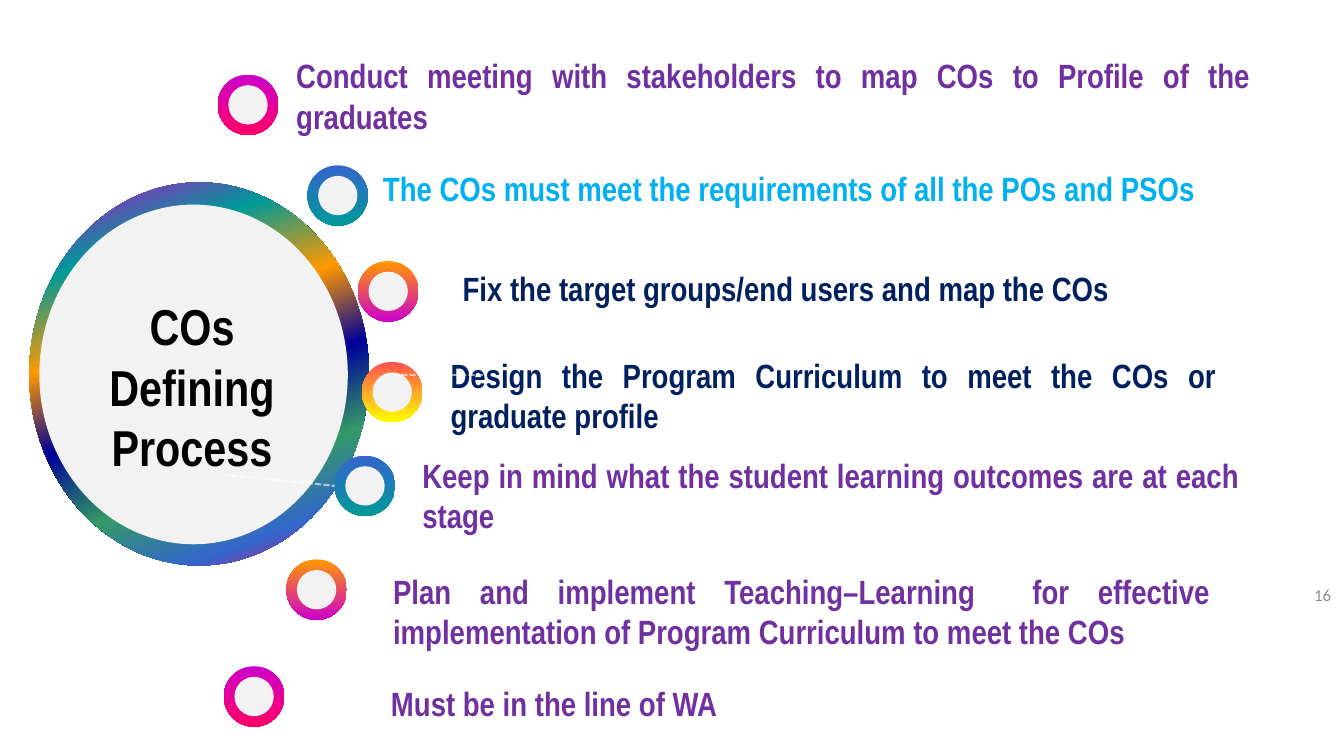
from lxml import etree
from pptx import Presentation
from pptx.dml.color import RGBColor
from pptx.enum.dml import MSO_LINE
from pptx.enum.shapes import MSO_CONNECTOR, MSO_SHAPE
from pptx.enum.text import MSO_ANCHOR, PP_ALIGN
from pptx.oxml.ns import qn
from pptx.util import Inches, Pt

OVAL = MSO_SHAPE.OVAL
LINE = MSO_CONNECTOR.STRAIGHT
DASH = MSO_LINE.SQUARE_DOT
TOP, MID = MSO_ANCHOR.TOP, MSO_ANCHOR.MIDDLE
LEFT, RIGHT = PP_ALIGN.LEFT, PP_ALIGN.RIGHT
CENTER, JUST = PP_ALIGN.CENTER, PP_ALIGN.JUSTIFY

# Content
PURPLE, SKY, NAVY, PALE = "7030A0", "00B0F0", "002060", "F2F2F2"
PINK = [(0, "CC00CC"), (100, "FF0066")]
TEAL = [(0, "3366CC"), (100, "009999")]
AMBER = [(0, "FF9900"), (100, "CC00CC")]
SUN = [(0, "FF5050"), (100, "FFFF00")]
RAINBOW = [(0, "CC00CC"), (20, "009999"), (38, "FF9900"), (55, "000099"),
           (72, "339966"), (87, "3366CC"), (100, "FF0066")]

# ring left and top, ring stops, text box, text colour, text
STEPS = [
    (2.16, 0.74, PINK, (2.84, 0.5, 9.66, 0.91), PURPLE,
     "Conduct meeting with stakeholders to map COs to Profile of the graduates"),
    (3.05, 1.64, TEAL, (3.7, 1.62, 8.71, 0.5), SKY,
     "The COs must meet the requirements of all the POs and PSOs"),
    (3.55, 2.59, AMBER, (4.49, 2.61, 7.53, 0.5), NAVY,
     "Fix the target groups/end users and map the COs"),
    (3.59, 3.59, SUN, (4.37, 3.47, 7.79, 0.91), NAVY,
     "Design the Program Curriculum to meet the COs or graduate profile"),
    (3.32, 4.52, TEAL, (4.09, 4.46, 8.3, 0.91), PURPLE,
     "Keep in mind what the student learning outcomes are at each stage"),
    (2.84, 5.55, AMBER, (3.8, 5.61, 8.3, 0.91), PURPLE,
     "Plan and implement Teaching–Learning  for effective "
     "implementation of Program Curriculum to meet the COs"),
    (2.22, 6.61, PINK, (3.78, 6.73, 4.17, 0.5), PURPLE,
     "Must be in the line of WA"),
]
LINKS = [(3.81, 3.72, 4.79, 3.72), (2.21, 4.71, 3.32, 4.82)]
RING, HOLE = 0.6, 0.39

deck = Presentation()
deck.slide_width, deck.slide_height = Inches(13.33), Inches(7.5)
slide = deck.slides.add_slide(deck.slide_layouts[6])


def color(code):
    return RGBColor.from_string(code)


def blend(shape, stops, angle):
    shape.fill.gradient()
    grad = shape.element.spPr.find(qn("a:gradFill"))
    items = grad.find(qn("a:gsLst"))
    for old in list(items):
        items.remove(old)
    for pos, code in stops:
        stop = etree.SubElement(items, qn("a:gs"), pos=str(pos * 1000))
        etree.SubElement(stop, qn("a:srgbClr"), val=code)
    lin = grad.find(qn("a:lin"))
    lin.set("ang", str(angle * 60000))
    lin.set("scaled", "0")


def oval(home, box, stops=None, angle=90):
    shape = home.add_shape(OVAL, *map(Inches, box))
    shape.shadow.inherit = False
    shape.line.fill.background()
    if stops:
        blend(shape, stops, angle)
    else:
        shape.fill.solid()
        shape.fill.fore_color.rgb = color(PALE)


def write(text, box, size=24, font="Arial Narrow", code="000000",
          bold=True, align=JUST, anchor=TOP):
    frame = slide.shapes.add_textbox(*map(Inches, box)).text_frame
    frame.word_wrap = True
    frame.vertical_anchor = anchor
    frame.text = text
    for para in frame.paragraphs:
        para.alignment = align
        face = para.runs[0].font
        face.size, face.name, face.bold = Pt(size), font, bold
        face.color.rgb = color(code)


def link(ends):
    line = slide.shapes.add_connector(LINE, *map(Inches, ends))
    line.line.width = Pt(1.5)
    line.line.dash_style = DASH
    line.line.color.rgb = color("FFFFFF")
    props = line.element.spPr
    etree.SubElement(props.find(".//" + qn("a:srgbClr")),
                     qn("a:alpha"), val="59000")
    etree.SubElement(props, qn("a:effectLst"))


# Main circle
oval(slide.shapes, (0.29, 1.81, 3.37, 3.8), RAINBOW, 70)
oval(slide.shapes, (0.39, 2.03, 3.06, 3.37))
write("COs\nDefining Process", (0.43, 2.88, 2.95, 1.92), size=36, align=CENTER)

# Steps
gap = (RING - HOLE) / 2
for x, y, stops, box, code, text in STEPS:
    group = slide.shapes.add_group_shape().shapes
    oval(group, (x, y, RING, RING), stops)
    oval(group, (x + gap, y + gap, HOLE, HOLE))
    write(text, box, code=code)

# Dashed links
for ends in LINKS:
    link(ends)

# Page number
write("16", (10.3, 5.7, 3, 0.4), size=12, font="Calibri", code="8C8C8C",
      bold=False, align=RIGHT, anchor=MID)

deck.save("out.pptx")
